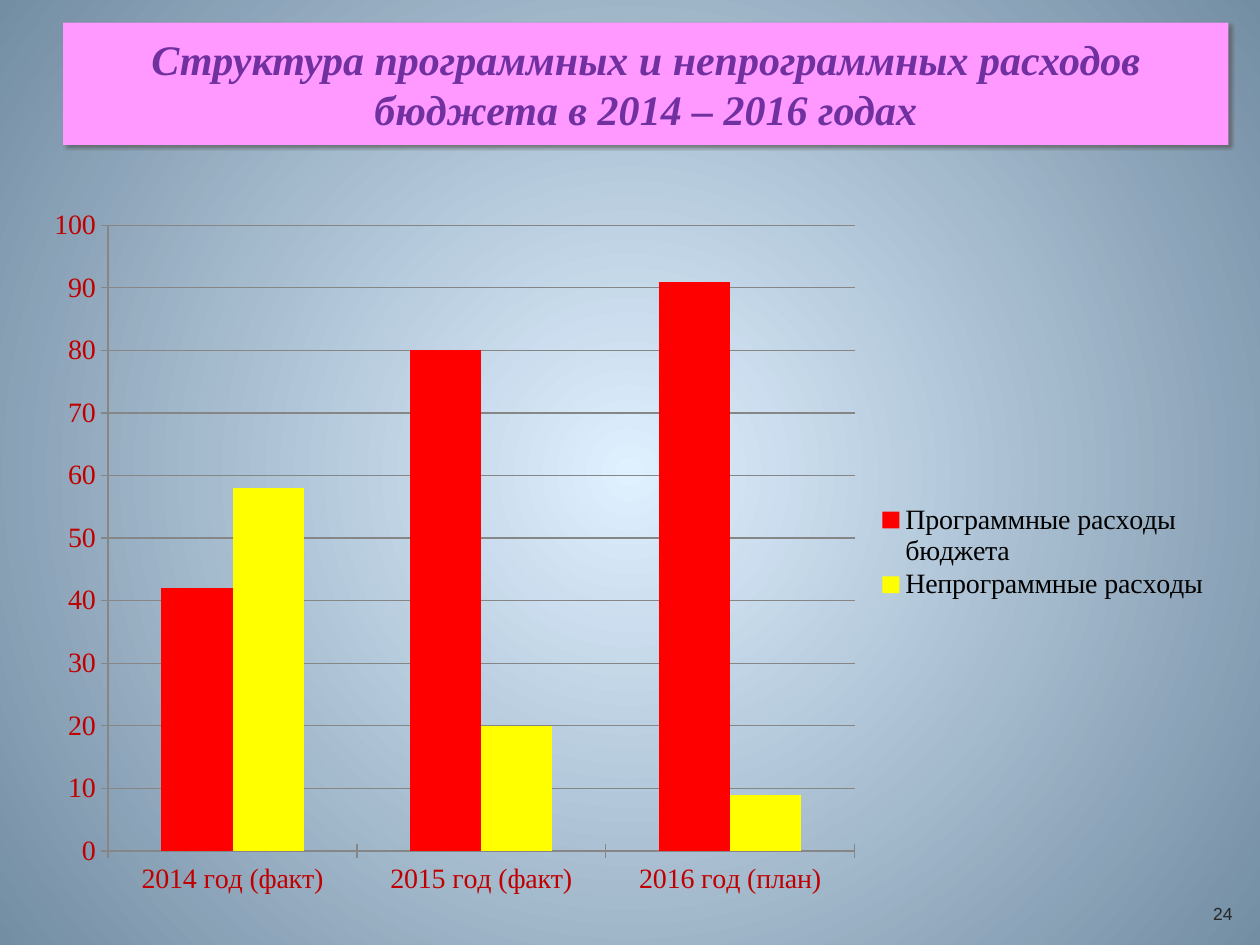
from lxml import etree
from pptx import Presentation
from pptx.chart.data import CategoryChartData
from pptx.dml.color import RGBColor
from pptx.enum.chart import XL_CHART_TYPE, XL_LEGEND_POSITION, XL_TICK_MARK
from pptx.enum.shapes import MSO_SHAPE
from pptx.enum.text import MSO_ANCHOR, PP_ALIGN
from pptx.oxml import parse_xml
from pptx.oxml.ns import nsdecls, qn
from pptx.util import Inches, Pt

PINK = RGBColor(0xFF, 0x99, 0xFF)
PURPLE = RGBColor(0x70, 0x30, 0xA0)
DARK_RED = RGBColor(0xC0, 0x00, 0x00)
RED = RGBColor(0xFF, 0x00, 0x00)
YELLOW = RGBColor(0xFF, 0xFF, 0x00)
GREY = RGBColor(0x86, 0x86, 0x86)
BLACK = RGBColor(0x00, 0x00, 0x00)
DARK = RGBColor(0x26, 0x26, 0x26)
LIGHT_BLUE = RGBColor(0xDF, 0xF0, 0xFF)
STEEL_BLUE = RGBColor(0x73, 0x8D, 0xA3)
SERIF = "Times New Roman"


def set_font(font, color, **values):
    for name, value in values.items():
        setattr(font, name, value)
    font.color.rgb = color


def manual_layout(x, y, w, h, inner=False):
    """Return a chart layout element; lengths are fractions of the chart."""
    target = '<c:layoutTarget val="inner"/>' if inner else ""
    return parse_xml(
        f'<c:layout {nsdecls("c")}><c:manualLayout>{target}'
        '<c:xMode val="edge"/><c:yMode val="edge"/>'
        f'<c:x val="{x}"/><c:y val="{y}"/><c:w val="{w}"/><c:h val="{h}"/>'
        '</c:manualLayout></c:layout>')


prs = Presentation()
prs.slide_width, prs.slide_height = Inches(10), Inches(7.5)
s = prs.slides.add_slide(prs.slide_layouts[6])

# Radial background
fill = s.background.fill
fill.gradient()
for stop, color, position in zip(fill.gradient_stops, (LIGHT_BLUE, STEEL_BLUE), (0, 1)):
    stop.color.rgb = color
    stop.position = position
grad = s.element.find(".//" + qn("a:gradFill"))
grad.replace(grad.find(qn("a:lin")), parse_xml(
    f'<a:path {nsdecls("a")} path="circle">'
    '<a:fillToRect l="50000" t="50000" r="50000" b="50000"/></a:path>'))

# Title and slide number
title = s.shapes.add_shape(MSO_SHAPE.RECTANGLE, Inches(0.5), Inches(0.18),
                           Inches(9.25), Inches(0.97))
title.fill.solid()
title.fill.fore_color.rgb = PINK
title.line.fill.background()
title.shadow.inherit = False
shadow = etree.SubElement(title.element.spPr.find(qn("a:effectLst")), qn("a:outerShdw"),
                          blurRad=str(Pt(2)), dist=str(Pt(2)), dir=str(40 * 60000),
                          algn="tl", rotWithShape="0")
shadow_color = etree.SubElement(shadow, qn("a:srgbClr"), val="595959")
etree.SubElement(shadow_color, qn("a:alpha"), val="71000")

number = s.shapes.add_textbox(Inches(9.45), Inches(7.05), Inches(0.51), Inches(0.4))

for sp, text, color, values in (
    (title, "Структура программных и непрограммных расходов бюджета в 2014 – 2016 годах",
     PURPLE, dict(name=SERIF, size=Pt(24), bold=True, italic=True)),
    (number, "24", DARK, dict(name="Arial", size=Pt(10))),
):
    tf = sp.text_frame
    tf.word_wrap = True
    tf.vertical_anchor = MSO_ANCHOR.MIDDLE
    p = tf.paragraphs[0]
    p.alignment = PP_ALIGN.CENTER
    r = p.add_run()
    r.text = text
    set_font(r.font, color, **values)

# Chart
data = CategoryChartData()
data.categories = ["2014 год (факт)", "2015 год (факт)", "2016 год (план)"]
data.add_series("Программные расходы бюджета", (42, 80, 91))
data.add_series("Непрограммные расходы", (58, 20, 9))
chart = s.shapes.add_chart(XL_CHART_TYPE.COLUMN_CLUSTERED, Inches(0.24), Inches(1.55),
                           Inches(9.51), Inches(5.67), data).chart
chart.has_title = False
set_font(chart.font, BLACK, name="Arial", size=Pt(18))

plot = chart.plots[0]
plot.vary_by_categories = False
plot.gap_width = 150
plot.overlap = 0
for series, color in zip(plot.series, (RED, YELLOW)):
    series.format.fill.solid()
    series.format.fill.fore_color.rgb = color

for axis in (chart.category_axis, chart.value_axis):
    set_font(axis.tick_labels.font, DARK_RED, name=SERIF, size=Pt(16))
    axis.major_tick_mark = XL_TICK_MARK.CROSS
    axis.format.line.color.rgb = GREY
values_axis = chart.value_axis
values_axis.minimum_scale = 0
values_axis.maximum_scale = 100
values_axis.major_unit = 10
values_axis.has_major_gridlines = True
values_axis.major_gridlines.format.line.color.rgb = GREY

chart.has_legend = True
legend = chart.legend
legend.position = XL_LEGEND_POSITION.RIGHT
legend.include_in_layout = False
set_font(legend.font, BLACK, name=SERIF, size=Pt(16))

plot_area = chart.element.find(".//" + qn("c:plotArea"))
legend_el = chart.element.find(".//" + qn("c:legend"))
for parent in (plot_area, legend_el):
    for old in parent.findall(qn("c:layout")):
        parent.remove(old)
plot_area.insert(0, manual_layout(0.065, 0.042, 0.623, 0.876, inner=True))
legend_el.find(qn("c:legendPos")).addnext(manual_layout(0.7, 0.43, 0.29, 0.14))

prs.save("out.pptx")
